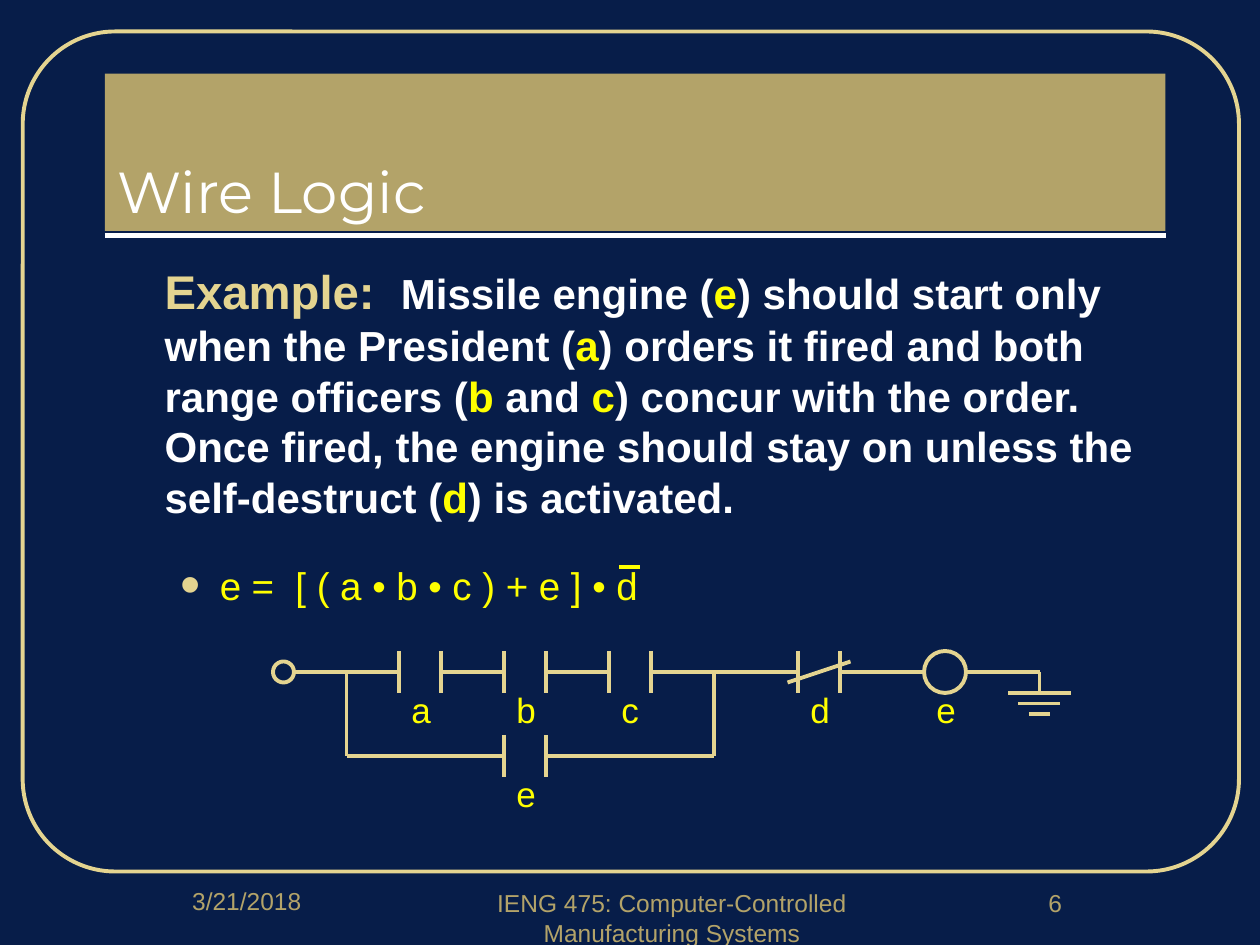
from lxml.etree import SubElement
from pptx import Presentation
from pptx.dml.color import RGBColor
from pptx.enum.shapes import MSO_CONNECTOR, MSO_SHAPE
from pptx.enum.text import MSO_ANCHOR, PP_ALIGN
from pptx.oxml.ns import qn
from pptx.util import Pt

NAVY, GOLD, SAND = "071D49", "B3A369", "E4D490"
WHITE, YELLOW = "FFFFFF", "FFFF00"
color = RGBColor.from_string


def add_run(paragraph, text, size, hue, bold=False, font="Arial"):
    run = paragraph.add_run()
    run.text = text
    run.font.name = font
    run.font.size = Pt(size)
    run.font.bold = bold
    run.font.color.rgb = color(hue)


def draw_line(x1, y1, x2, y2, hue=SAND, width=2.25):
    wire = slide.shapes.add_connector(
        MSO_CONNECTOR.STRAIGHT, Pt(x1), Pt(y1), Pt(x2), Pt(y2))
    wire.line.color.rgb = color(hue)
    wire.line.width = Pt(width)
    SubElement(wire._element.spPr, qn("a:effectLst"))


prs = Presentation()
prs.slide_width, prs.slide_height = Pt(720), Pt(540)
slide = prs.slides.add_slide(prs.slide_layouts[6])
slide.background.fill.solid()
slide.background.fill.fore_color.rgb = color(NAVY)

# Frame, source terminal and engine coil: outlines only
for preset, left, top, width, height in [
    (MSO_SHAPE.ROUNDED_RECTANGLE, 13, 18, 695, 480),
    (MSO_SHAPE.OVAL, 156, 378, 12, 12),
    (MSO_SHAPE.OVAL, 528, 372, 24, 24),
]:
    outline = slide.shapes.add_shape(
        preset, Pt(left), Pt(top), Pt(width), Pt(height))
    outline.shadow.inherit = False
    outline.fill.background()
    outline.line.color.rgb = color(SAND)
    outline.line.width = Pt(2.25)
    if preset == MSO_SHAPE.ROUNDED_RECTANGLE:
        outline.adjustments[0] = 0.11

# Title band
title = slide.shapes.add_shape(
    MSO_SHAPE.RECTANGLE, Pt(60), Pt(42), Pt(606), Pt(90))
title.shadow.inherit = False
title.fill.solid()
title.fill.fore_color.rgb = color(GOLD)
title.line.fill.background()
title.text_frame.vertical_anchor = MSO_ANCHOR.BOTTOM
title.text_frame.paragraphs[0].alignment = PP_ALIGN.LEFT
add_run(title.text_frame.paragraphs[0], "Wire Logic", 33, WHITE,
        font="Montserrat")
draw_line(60, 134.6, 666, 134.6, WHITE, 3)

# Footer
for text, left, top, width in [
    ("3/21/2018", 60, 503, 162),
    ("IENG 475: Computer-Controlled Manufacturing Systems", 258, 504, 252),
    ("6", 540, 504, 126),
]:
    footer = slide.shapes.add_textbox(Pt(left), Pt(top), Pt(width), Pt(36))
    footer.text_frame.word_wrap = True
    footer.text_frame.paragraphs[0].alignment = PP_ALIGN.CENTER
    add_run(footer.text_frame.paragraphs[0], text, 14, GOLD)

# Example and its formula
body = slide.shapes.add_textbox(Pt(60), Pt(150), Pt(606), Pt(318)).text_frame
body.word_wrap = True
example = body.paragraphs[0]
example.space_before = Pt(5)
example.line_spacing = Pt(28.9)
example._p.get_or_add_pPr().set("marL", str(Pt(27)))
add_run(example, "Example:  ", 27, SAND, bold=True)
for text, hue in [
    ("Missile engine (", WHITE), ("e", YELLOW),
    (") should start only when the President (", WHITE), ("a", YELLOW),
    (") orders it fired and both range officers (", WHITE), ("b", YELLOW),
    (" and ", WHITE), ("c", YELLOW),
    (") concur with the order. Once fired, the engine should stay on "
     "unless the self-destruct (", WHITE), ("d", YELLOW),
    (") is activated.", WHITE),
]:
    add_run(example, text, 24, hue, bold=True)

formula = body.add_paragraph()
formula.space_before = Pt(23)
bullet = formula._p.get_or_add_pPr()
bullet.set("marL", str(Pt(58.5)))
bullet.set("indent", str(Pt(-22.5)))
SubElement(SubElement(bullet, qn("a:buClr")), qn("a:srgbClr")).set("val", SAND)
SubElement(bullet, qn("a:buSzPct")).set("val", "150000")
SubElement(bullet, qn("a:buFont")).set("typeface", "Arial")
SubElement(bullet, qn("a:buChar")).set("char", "•")
add_run(formula, "e =  [ ( a • b • c ) + e ] • d", 22, YELLOW)
draw_line(354, 324, 366, 324, YELLOW)  # negation bar over d

# Ladder circuit: contacts are pairs of plates, 24 pt apart
RAIL, BRANCH, GAP = 384, 432, 24
for x, y in [(228, RAIL), (288, RAIL), (348, RAIL), (456, RAIL),
             (288, BRANCH)]:
    for plate in (x, x + GAP):
        draw_line(plate, y - 12, plate, y + 12)
draw_line(450, RAIL + 6, 486, RAIL - 6)  # slash of the closed contact

for x1, x2, y in [
    (168, 228, RAIL), (252, 288, RAIL), (312, 348, RAIL), (372, 456, RAIL),
    (480, 528, RAIL), (552, 594, RAIL), (198, 288, BRANCH), (312, 408, BRANCH),
]:
    draw_line(x1, y, x2, y)
for x in (198, 408):
    draw_line(x, RAIL, x, BRANCH)

draw_line(594, RAIL, 594, RAIL + 12)
for step, half in enumerate((18, 12, 6)):  # ground
    y = RAIL + 12 + 6 * step
    draw_line(594 - half, y, 594 + half, y)

for name, x, y in [("a", 228, RAIL), ("b", 288, RAIL), ("c", 348, RAIL),
                   ("d", 456, RAIL), ("e", 528, RAIL), ("e", 288, BRANCH)]:
    label = slide.shapes.add_textbox(Pt(x), Pt(y + 6), Pt(GAP), Pt(31))
    label.text_frame.word_wrap = True
    add_run(label.text_frame.paragraphs[0], name, 20, YELLOW)

prs.save("out.pptx")
